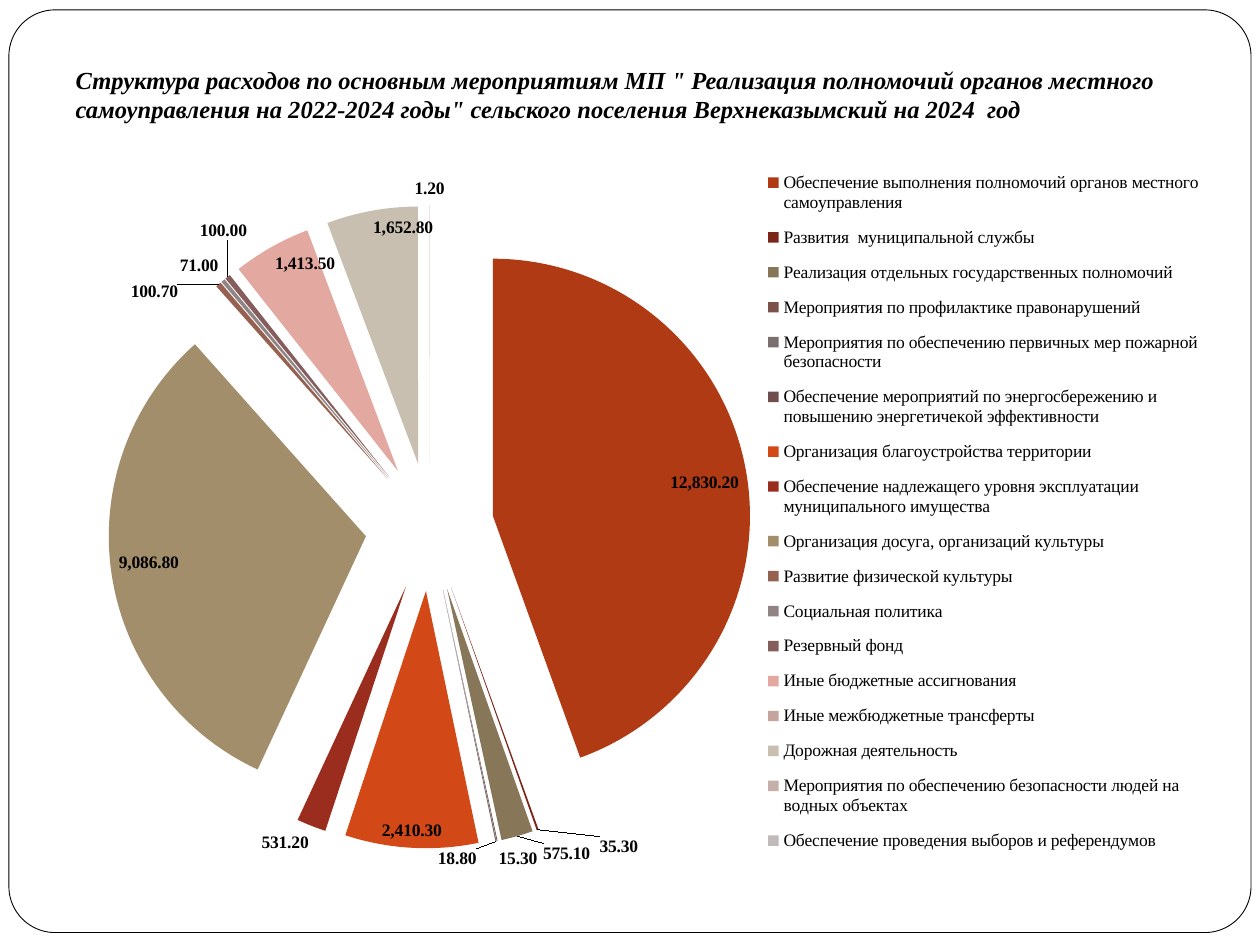
from lxml import etree
from pptx import Presentation
from pptx.chart.data import CategoryChartData
from pptx.dml.color import RGBColor
from pptx.enum.chart import XL_CHART_TYPE, XL_LABEL_POSITION, XL_LEGEND_POSITION
from pptx.enum.shapes import MSO_SHAPE
from pptx.enum.text import MSO_ANCHOR, PP_ALIGN
from pptx.oxml.ns import qn
from pptx.util import Cm, Pt

PIE = XL_CHART_TYPE.PIE
INSIDE, OUTSIDE = XL_LABEL_POSITION.INSIDE_END, XL_LABEL_POSITION.OUTSIDE_END
LEGEND_RIGHT = XL_LEGEND_POSITION.RIGHT
ROUNDED = MSO_SHAPE.ROUNDED_RECTANGLE
BOTTOM, LEFT = MSO_ANCHOR.BOTTOM, PP_ALIGN.LEFT

FONT = "Times New Roman"
NUMBER_FORMAT = "#,##0.00"
COLORS = {"paper": "FFFFFF", "ink": "000000"}
TITLE = (
    'Структура расходов по основным мероприятиям МП " Реализация полномочий '
    'органов местного самоуправления на 2022-2024 годы" сельского поселения '
    "Верхнеказымский на 2024  год"
)
EXPENSES = [
    ("Обеспечение выполнения полномочий органов местного самоуправления", 12830.2, "AF3A14"),
    ("Развития  муниципальной службы", 35.3, "7D2419"),
    ("Реализация отдельных государственных полномочий", 575.1, "877758"),
    ("Мероприятия по профилактике правонарушений", 15.3, "7B5249"),
    ("Мероприятия по обеспечению первичных мер пожарной безопасности", 18.8, "7A6E6F"),
    ("Обеспечение мероприятий по энергосбережению и повышению энергетичекой эффективности", 0, "6F4D4D"),
    ("Организация благоустройства территории", 2410.3, "D34817"),
    ("Обеспечение надлежащего уровня эксплуатации муниципального имущества", 531.2, "9B2D1F"),
    ("Организация досуга, организаций культуры", 9086.8, "A28E6A"),
    ("Развитие физической культуры", 100.7, "956251"),
    ("Социальная политика", 71, "918485"),
    ("Резервный фонд", 100, "855D5D"),
    ("Иные бюджетные ассигнования", 1413.5, "E3A8A0"),
    ("Иные межбюджетные трансферты", None, "C5A49E"),
    ("Дорожная деятельность", 1652.8, "C9BFB0"),
    ("Мероприятия по обеспечению безопасности людей на водных объектах", 1.2, "C5AFAA"),
    ("Обеспечение проведения выборов и референдумов", 0, "C1BABB"),
]
INSIDE_FROM = 1000
LABEL_SHIFTS = {1: (0.05, 0), 2: (0.02, 0), 4: (-0.05, 0), 9: (-0.03, 0.03), 11: (0.02, -0.04)}


def color(name):
    """Return the palette colour with this name."""
    return RGBColor.from_string(COLORS[name])


def set_layout(parent, index, **values):
    """Give a chart part a manual layout, as fractions of the chart."""
    for old_layout in parent.findall(qn("c:layout")):
        parent.remove(old_layout)
    layout = etree.Element(qn("c:layout"))
    manual = etree.SubElement(layout, qn("c:manualLayout"))
    for tag, value in values.items():
        etree.SubElement(manual, qn(f"c:{tag}")).set("val", str(value))
    parent.insert(index, layout)


def add_frame(slide, left, top, width, height):
    """Draw the rounded page border behind the title."""
    frame = slide.shapes.add_shape(ROUNDED, left, top, width, height)
    frame.adjustments[0] = 0.05
    frame.shadow.inherit = False
    frame.fill.solid()
    frame.fill.fore_color.rgb = color("paper")
    frame.line.color.rgb = color("ink")
    frame.line.width = Pt(0.5)
    slide.shapes.title._element.addprevious(frame._element)


def fill_title(slide, left, top, width, height):
    """Place and format the title placeholder."""
    title = slide.shapes.title
    title.left, title.top, title.width, title.height = left, top, width, height
    text_frame = title.text_frame
    text_frame.text = TITLE
    text_frame.word_wrap = True
    text_frame.vertical_anchor = BOTTOM
    text_frame.margin_bottom = Cm(0.25)
    paragraph = text_frame.paragraphs[0]
    paragraph.alignment = LEFT
    font = paragraph.font
    font.name, font.size, font.bold, font.italic = FONT, Pt(14), True, True
    font.color.rgb = color("ink")


def format_font(font, bold=False):
    """Apply the chart's text style."""
    font.name, font.size, font.bold = FONT, Pt(10), bold
    font.color.rgb = color("ink")


def format_slices(series):
    """Colour the slices and place the label of each non-zero one."""
    for index, (_, amount, hex_color) in enumerate(EXPENSES):
        point = series.points[index]
        point.format.fill.solid()
        point.format.fill.fore_color.rgb = RGBColor.from_string(hex_color)
        label = point.data_label
        label.position = INSIDE if amount and amount >= INSIDE_FROM else OUTSIDE
        format_font(label.font, bold=True)
        label_xml = series._element.find(qn("c:dLbls")).findall(qn("c:dLbl"))[index]
        if not amount:
            for part in label_xml[1:]:
                label_xml.remove(part)
            etree.SubElement(label_xml, qn("c:delete")).set("val", "1")
        elif index in LABEL_SHIFTS:
            shift_x, shift_y = LABEL_SHIFTS[index]
            set_layout(label_xml, 1, x=shift_x, y=shift_y)


def add_expense_pie(slide, left, top, width, height):
    """Add the exploded pie of expenses with its legend."""
    data = CategoryChartData(number_format=NUMBER_FORMAT)
    data.categories = [name for name, _, _ in EXPENSES]
    data.add_series("Series 1", [amount for _, amount, _ in EXPENSES])
    chart = slide.shapes.add_chart(PIE, left, top, width, height, data).chart
    chart.has_title = False
    format_font(chart.font)
    plot = chart.plots[0]
    plot.vary_by_categories = True
    series = plot.series[0]
    series.format.line.fill.background()
    explosion = etree.Element(qn("c:explosion"))
    explosion.set("val", "25")
    series._element.find(qn("c:spPr")).addnext(explosion)

    labels = series.data_labels
    labels.show_value = True
    labels.number_format = NUMBER_FORMAT
    labels.number_format_is_linked = False
    format_font(labels.font, bold=True)
    format_slices(series)
    labels_xml = series._element.find(qn("c:dLbls"))
    leader_lines = labels_xml.find(qn("c:showLeaderLines"))
    if leader_lines is None:
        leader_lines = etree.SubElement(labels_xml, qn("c:showLeaderLines"))
    leader_lines.set("val", "1")

    chart.has_legend = True
    legend = chart.legend
    legend.position = LEGEND_RIGHT
    legend.include_in_layout = False
    format_font(legend.font)
    set_layout(legend._element, 1, xMode="edge", yMode="edge", x=0.62, y=0.03, w=0.37, h=0.94)
    plot_area = chart._chartSpace.chart.plotArea
    set_layout(plot_area, 0, layoutTarget="inner", xMode="edge", yMode="edge",
               x=0.07, y=0.09, w=0.54, h=0.86)


def main():
    """Build and save the slide."""
    presentation = Presentation()
    presentation.slide_width, presentation.slide_height = Cm(25.4), Cm(19.05)
    slide = presentation.slides.add_slide(presentation.slide_layouts[5])
    add_frame(slide, Cm(0.18), Cm(0.2), Cm(25.04), Cm(18.6))
    fill_title(slide, Cm(1.27), Cm(0.74), Cm(22.63), Cm(2))
    add_expense_pie(slide, Cm(0.5), Cm(2.72), Cm(24), Cm(15.2))
    presentation.save("out.pptx")


if __name__ == "__main__":
    main()
